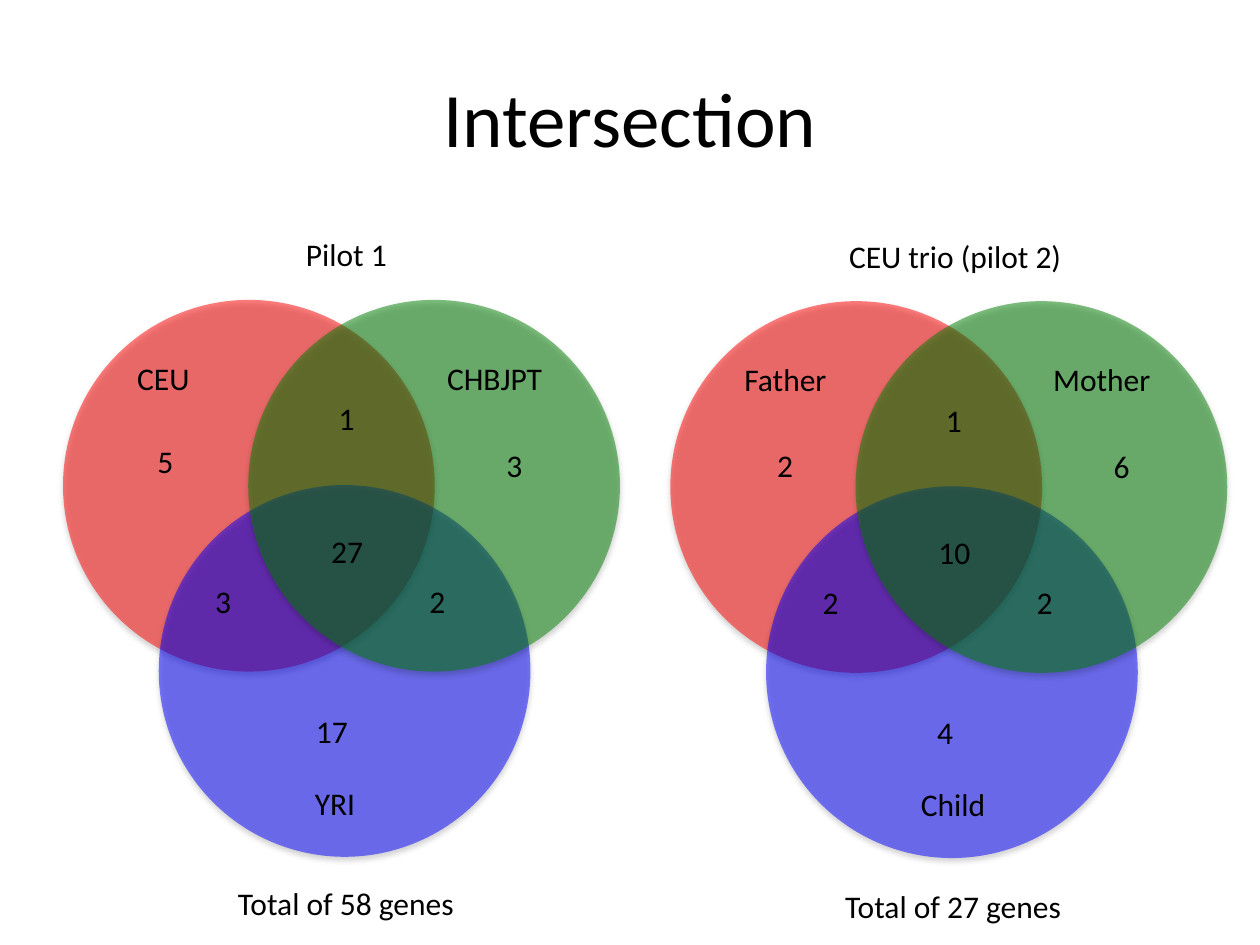
from lxml import etree
from pptx import Presentation
from pptx.dml.color import RGBColor
from pptx.enum.shapes import MSO_SHAPE as SHAPE
from pptx.enum.text import MSO_ANCHOR as ANCHOR, MSO_AUTO_SIZE as AUTO, PP_ALIGN as ALIGN
from pptx.oxml import parse_xml
from pptx.oxml.ns import nsdecls, qn
from pptx.util import Inches, Pt

BLACK = RGBColor(0, 0, 0)
RED = RGBColor(255, 0, 0)
BLUE = RGBColor(0, 0, 255)
GREEN = RGBColor(0, 128, 0)

DIAMETER = 2.95
CIRCLES = [(0.5, 2.38, RED), (1.26, 3.85, BLUE), (1.97, 2.38, GREEN)]
SHADOW = f"""<a:effectLst {nsdecls("a")}>
  <a:outerShdw blurRad="40000" dist="23000" dir="5400000" rotWithShape="0">
    <a:srgbClr val="000000"><a:alpha val="35000"/></a:srgbClr>
  </a:outerShdw>
</a:effectLst>"""

# Each diagram: its shift, then labels as (text, left, top, width) before the shift
DIAGRAMS = [
    (0, 0, [
        ("1", 2.59, 3.12, 0.33), ("2", 3.31, 4.57, 0.33),
        ("CHBJPT", 3.45, 2.8, 0.97), ("YRI", 2.4, 6.17, 0.53),
        ("CEU", 0.99, 2.8, 0.62), ("3", 1.61, 4.57, 0.33),
        ("27", 2.53, 4.17, 0.46), ("5", 1.15, 3.46, 0.33),
        ("3", 3.92, 3.49, 0.33), ("17", 2.41, 5.6, 0.46),
        ("Total of 58 genes", 1.79, 6.97, 1.93), ("Pilot 1", 2.33, 1.82, 0.85),
    ]),
    (4.82, 0.01, [
        ("1", 2.59, 3.12, 0.33), ("2", 3.31, 4.57, 0.33),
        ("Mother", 3.44, 2.8, 0.98), ("Child", 2.39, 6.17, 0.72),
        ("Father", 0.99, 2.8, 0.86), ("2", 1.61, 4.57, 0.33),
        ("10", 2.53, 4.17, 0.46), ("2", 1.25, 3.48, 0.33),
        ("6", 3.92, 3.49, 0.33), ("4", 2.52, 5.6, 0.33),
        ("Total of 27 genes", 1.79, 6.98, 1.93), ("CEU trio (pilot 2)", 1.82, 1.82, 1.9),
    ]),
]

prs = Presentation()
prs.slide_width, prs.slide_height = Inches(10), Inches(7.5)
s = prs.slides.add_slide(prs.slide_layouts[6])


def add_text(text, left, top, width, height=0.4, size=18, **frame):
    tb = s.shapes.add_textbox(Inches(left), Inches(top), Inches(width), Inches(height))
    tf = tb.text_frame
    for name, value in frame.items():
        setattr(tf, name, value)
    p = tf.paragraphs[0]
    r = p.add_run()
    r.text = text
    r.font.name, r.font.size = "Calibri", Pt(size)
    r.font.color.rgb = BLACK
    return p


title = add_text("Intersection", 0.5, 0.3, 9, 1.25, 44,
                 word_wrap=True, vertical_anchor=ANCHOR.MIDDLE)
title.alignment = ALIGN.CENTER

for dx, dy, labels in DIAGRAMS:
    venn = s.shapes.add_group_shape()
    for left, top, color in CIRCLES:
        sp = venn.shapes.add_shape(SHAPE.OVAL, Inches(left + dx), Inches(top + dy),
                                   Inches(DIAMETER), Inches(DIAMETER))
        sp.fill.solid()
        sp.fill.fore_color.rgb = color
        clr = sp.fill._xPr.find(f".//{qn('a:srgbClr')}")
        etree.SubElement(clr, qn("a:alpha"), val="50000")
        sp.line.fill.background()
        sp._element.spPr.append(parse_xml(SHADOW))
    for text, left, top, width in labels:
        add_text(text, left + dx, top + dy, width, word_wrap=False,
                 auto_size=AUTO.SHAPE_TO_FIT_TEXT)

prs.save("out.pptx")
